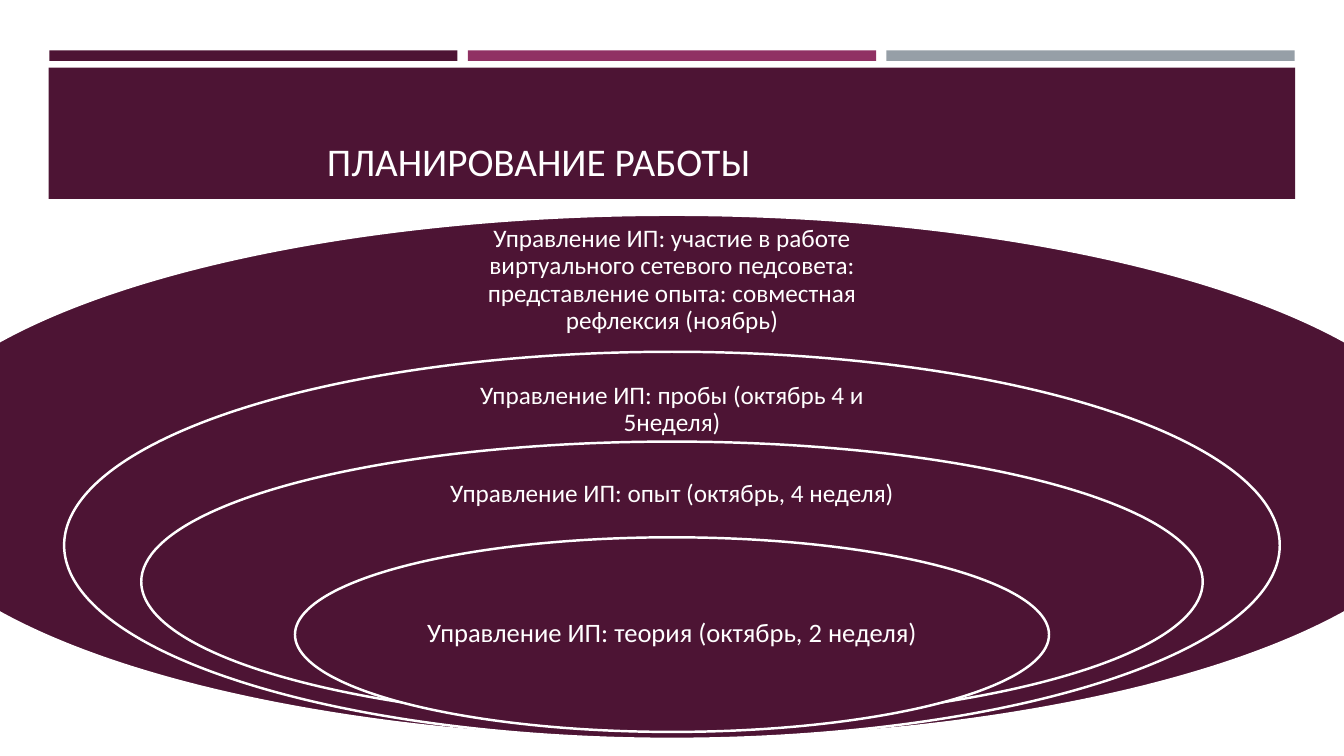
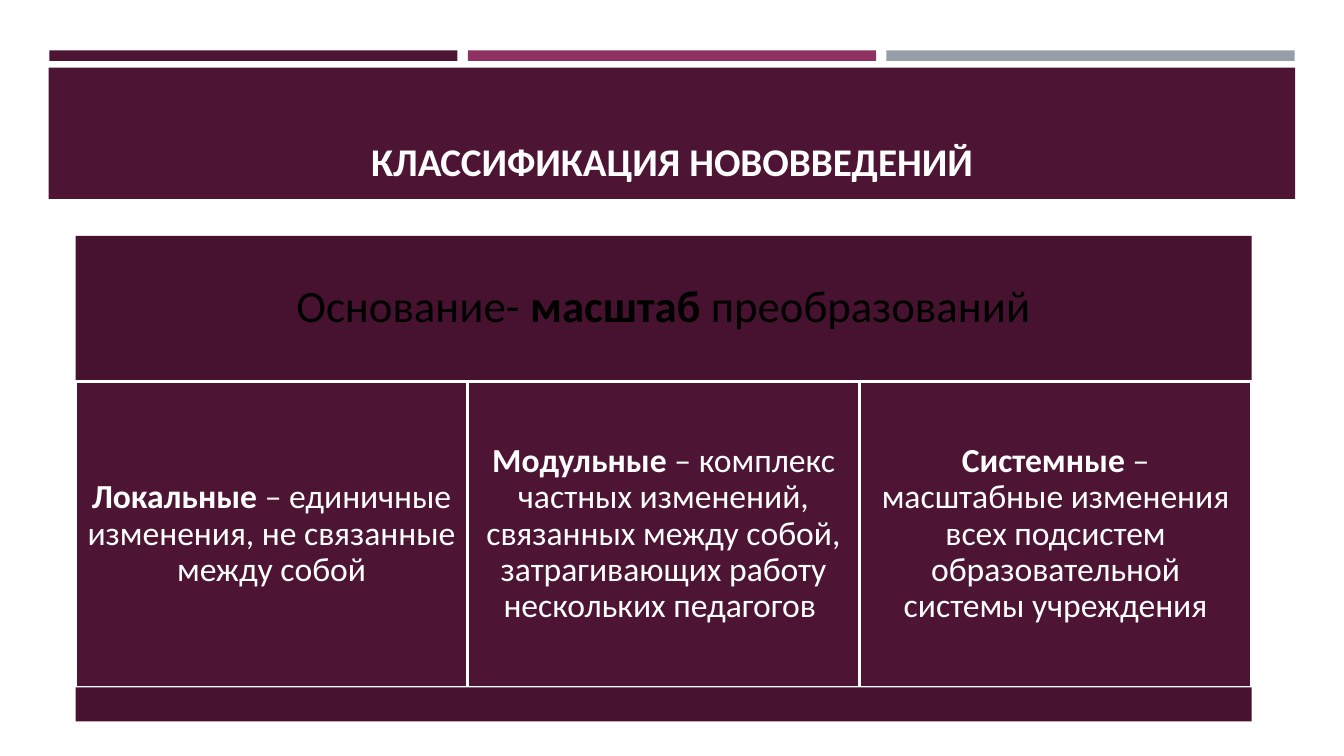
from pptx import Presentation
from pptx.dml.color import RGBColor
from pptx.enum.shapes import MSO_SHAPE as Preset
from pptx.enum.text import MSO_ANCHOR as Anchor, PP_ALIGN as Align
from pptx.util import Pt

FONT = "Calibri"
COLORS = {
    "plum": "4D1434",
    "dark plum": "46122F",
    "magenta": "903163",
    "gray": "969FA7",
    "white": "FFFFFF",
    "black": "000000",
}

PLAN_TITLE = "ПЛАНИРОВАНИЕ РАБОТЫ"
# Ring top, width, height; label top, width, height; inset; font size; label
RINGS = [
    (153.4, 1122.5, 374.4, 172.1, 313.9, 56.2, 10, 18,
     "Управление ИП: участие в работе виртуального сетевого педсовета: "
     "представление опыта: совместная рефлексия (ноябрь)"),
    (251.3, 868.3, 276.5, 267.8, 303.8, 49.7, 10, 18,
     "Управление ИП: пробы (октябрь 4 и 5неделя)"),
    (315.4, 758.2, 200.2, 330.5, 353.5, 45.4, 10, 18,
     "Управление ИП: опыт (октябрь, 4 неделя)"),
    (383.8, 538.6, 139, 418.3, 380.9, 69.1, 10.8, 19,
     "Управление ИП: теория (октябрь, 2 неделя)"),
]

CLASSES_TITLE = "КЛАССИФИКАЦИЯ НОВОВВЕДЕНИЙ"
# Texts are lists of (words, bold)
BASIS = [("Основание- ", False), ("масштаб ", True), ("преобразований", False)]
CLASSES = [
    [("Локальные ", True),
     ("– единичные изменения, не связанные между собой", False)],
    [("Модульные", True),
     (" – комплекс частных изменений, связанных между собой, "
      "затрагивающих работу нескольких педагогов ", False)],
    [("Системные", True),
     (" – масштабные изменения всех подсистем образовательной "
      "системы учреждения", False)],
]

SLIDE_WIDTH, SLIDE_HEIGHT = 960, 540
STRIPES = ["plum", "magenta", "gray"]
STRIPE_LEFT, STRIPE_WIDTH, STRIPE_GAP = 35.2, 291.6, 7.4
TABLE_LEFT, TABLE_WIDTH = 54, 840


def rgb(color):
    return RGBColor.from_string(COLORS[color])


def add_block(slide, preset, box, fill, outlined=False):
    shape = slide.shapes.add_shape(preset, *map(Pt, box))
    shape.shadow.inherit = False
    shape.fill.solid()
    shape.fill.fore_color.rgb = rgb(fill)
    if outlined:
        shape.line.color.rgb = rgb("white")
        shape.line.width = Pt(1.75)
    else:
        shape.line.fill.background()
    return shape


def write(shape, parts, size, color="white", inset=None, anchor=Anchor.MIDDLE,
          align=Align.CENTER, spacing=0.9):
    frame = shape.text_frame
    frame.word_wrap = True
    frame.vertical_anchor = anchor
    if inset is not None:
        frame.margin_left = frame.margin_right = Pt(inset)
        frame.margin_top = frame.margin_bottom = Pt(inset)
    paragraph = frame.paragraphs[0]
    paragraph.alignment = align
    paragraph.line_spacing = spacing
    for words, bold in parts:
        run = paragraph.add_run()
        run.text = words
        run.font.name = FONT
        run.font.size = Pt(size)
        run.font.bold = bold
        run.font.color.rgb = rgb(color)


def add_header_to_layout(layout, slide):
    """Draw the header bands on the slide, then move them to its layout."""
    bands = [
        add_block(slide, Preset.RECTANGLE,
                  (STRIPE_LEFT + i * (STRIPE_WIDTH + STRIPE_GAP), 36,
                   STRIPE_WIDTH, 7.5), color)
        for i, color in enumerate(STRIPES)
    ]
    bands.append(add_block(slide, Preset.RECTANGLE, (34.8, 48.3, 890.4, 93.8),
                           "plum"))
    for number, band in enumerate(bands, start=101):
        band.element.xpath("./p:nvSpPr/p:cNvPr")[0].set("id", str(number))
        layout.shapes.element.append(band.element)


def set_title(slide, text, bold=False, align=Align.CENTER, indent=7.2):
    title = slide.shapes.title
    title.left, title.top = Pt(46), Pt(55.4)
    title.width, title.height = Pt(868), Pt(80)
    write(title, [(text, bold)], 28, anchor=Anchor.BOTTOM, align=align)
    title.text_frame.margin_left = Pt(indent)


def fill_plan(slide):
    set_title(slide, PLAN_TITLE, align=Align.LEFT, indent=187.5)
    for (top, width, height, label_top, label_width, label_height,
         inset, size, label) in RINGS:
        add_block(slide, Preset.OVAL,
                  ((SLIDE_WIDTH - width) / 2, top, width, height),
                  "plum", outlined=True)
        label_box = ((SLIDE_WIDTH - label_width) / 2, label_top,
                     label_width, label_height)
        text_box = slide.shapes.add_textbox(*map(Pt, label_box))
        write(text_box, [(label, False)], size, inset=inset)


def fill_classes(slide):
    set_title(slide, CLASSES_TITLE, bold=True)
    basis = add_block(slide, Preset.RECTANGLE,
                      (TABLE_LEFT, 168.5, TABLE_WIDTH, 103.5), "dark plum")
    write(basis, BASIS, 32, color="black", inset=9.6)
    width = TABLE_WIDTH / len(CLASSES)
    for i, parts in enumerate(CLASSES):
        column = add_block(slide, Preset.RECTANGLE,
                           (TABLE_LEFT + i * width, 272.5, width, 218.3),
                           "plum", outlined=True)
        write(column, parts, 24, inset=7.2)
    add_block(slide, Preset.RECTANGLE,
              (TABLE_LEFT, 491, TABLE_WIDTH, 24.3), "dark plum")


def main():
    presentation = Presentation()
    presentation.slide_width = Pt(SLIDE_WIDTH)
    presentation.slide_height = Pt(SLIDE_HEIGHT)
    layout = presentation.slide_layouts[5]
    plan = presentation.slides.add_slide(layout)
    add_header_to_layout(layout, plan)
    fill_plan(plan)
    fill_classes(presentation.slides.add_slide(layout))
    presentation.save("out.pptx")


if __name__ == "__main__":
    main()
